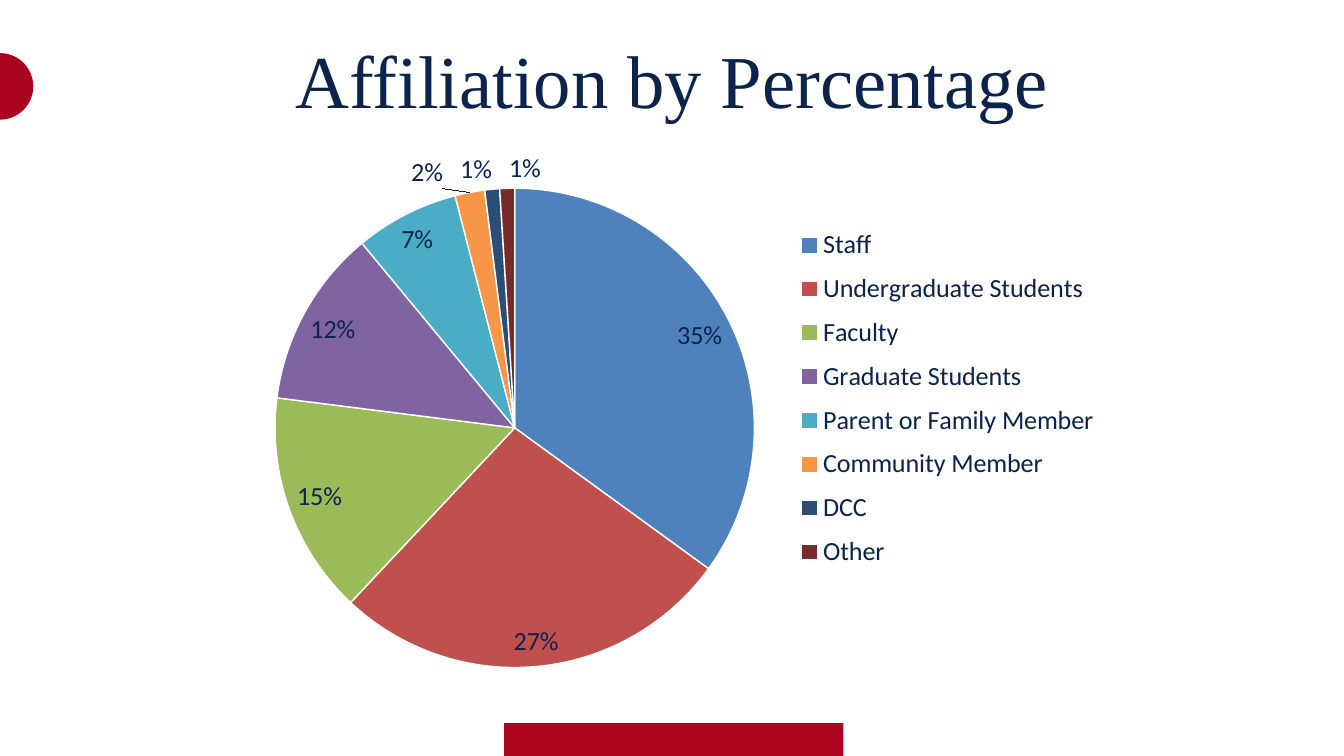
from lxml import etree
from pptx import Presentation
from pptx import util as u
from pptx.chart.data import CategoryChartData
from pptx.dml.color import RGBColor
from pptx.enum import chart as ch, shapes, text
from pptx.oxml.ns import qn

TITLE = "Affiliation by Percentage"
SHARES = [
    ("Staff", 35, "4F81BD"),
    ("Undergraduate Students", 27, "C0504D"),
    ("Faculty", 15, "9BBB59"),
    ("Graduate Students", 12, "8064A2"),
    ("Parent or Family Member", 7, "4BACC6"),
    ("Community Member", 2, "F79646"),
    ("DCC", 1, "2C4D75"),
    ("Other", 1, "772C2A"),
]
COLORS = {"navy": "0C234B", "bar": "AB0520", "dot": "AB0420", "white": "FFFFFF"}
WIDE, HIGH = 20, 11.25
DOT = 0.99


def rgb(name):
    return RGBColor.from_string(COLORS.get(name, name))


def box(*at):
    return [u.Inches(n) for n in at]


def style(font, size, face="Calibri", color="navy"):
    font.size, font.name = u.Pt(size), face
    font.color.rgb = rgb(color)


def add_text(slide, words, at, size, face, color="navy"):
    frame = slide.shapes.add_textbox(*box(*at)).text_frame
    frame.word_wrap = False
    frame.auto_size = text.MSO_AUTO_SIZE.SHAPE_TO_FIT_TEXT
    para = frame.paragraphs[0]
    para.alignment = text.PP_ALIGN.CENTER
    run = para.add_run()
    run.text = words
    style(run.font, size, face, color)


def add_block(slide, kind, at, color):
    shape = slide.shapes.add_shape(kind, *box(*at))
    shape.shadow.inherit = False
    shape.fill.solid()
    shape.fill.fore_color.rgb = rgb(color)
    shape.line.fill.background()


def place(node, index, inner=False, **area):
    """Set a chart part's manual layout, in shares of the chart's size."""
    for old in node.findall(qn("c:layout")):
        node.remove(old)
    layout = etree.Element(qn("c:layout"))
    node.insert(index, layout)
    manual = etree.SubElement(layout, qn("c:manualLayout"))
    marks = {"layoutTarget": "inner"} if inner else {}
    marks.update(xMode="edge", yMode="edge", **area)
    for tag, val in marks.items():
        etree.SubElement(manual, qn("c:" + tag)).set("val", str(val))


def add_pie(slide, at):
    data = CategoryChartData()
    data.categories = [name for name, _, _ in SHARES]
    data.add_series("Series 1", [val for _, val, _ in SHARES])
    chart = slide.shapes.add_chart(ch.XL_CHART_TYPE.PIE, *box(*at), data).chart
    style(chart.font, 28)
    chart.has_title = False
    chart.has_legend = True
    legend = chart.legend
    legend.position = ch.XL_LEGEND_POSITION.RIGHT
    legend.include_in_layout = False
    style(legend.font, 28)

    plot = chart.plots[0]
    plot.vary_by_categories = True
    for i, (_, _, color) in enumerate(SHARES):
        form = plot.series[0].points[i].format
        form.fill.solid()
        form.fill.fore_color.rgb = rgb(color)
        form.line.color.rgb = rgb("white")
        form.line.width = u.Pt(1.5)

    labels = plot.series[0].data_labels
    labels.show_value = False
    labels.show_percentage = True
    labels.number_format, labels.number_format_is_linked = "0%", False
    labels.position = ch.XL_LABEL_POSITION.BEST_FIT
    style(labels.font, 28)

    area = chart.element.find(".//" + qn("c:plotArea"))
    place(area, 0, inner=True, x=0.04, y=0.085, w=0.556, h=0.9)
    place(chart.element.find(".//" + qn("c:legend")), 1, x=0.64, y=0.14, w=0.36, h=0.68)


def main():
    deck = Presentation()
    deck.slide_width, deck.slide_height = box(WIDE, HIGH)
    slide = deck.slides.add_slide(deck.slide_layouts[6])
    kinds = shapes.MSO_SHAPE
    add_block(slide, kinds.RECTANGLE, (7.5, 10.76, 5.05, 0.54), "bar")
    add_block(slide, kinds.OVAL, (-DOT / 2, 0.79, DOT, DOT), "dot")
    add_pie(slide, (3.58, 2.12, 12.83, 7.94))
    wide = 11.52
    add_text(slide, TITLE, ((WIDE - wide) / 2, 0.46, wide, 1.45), 80, "Times New Roman")
    deck.save("out.pptx")


if __name__ == "__main__":
    main()
